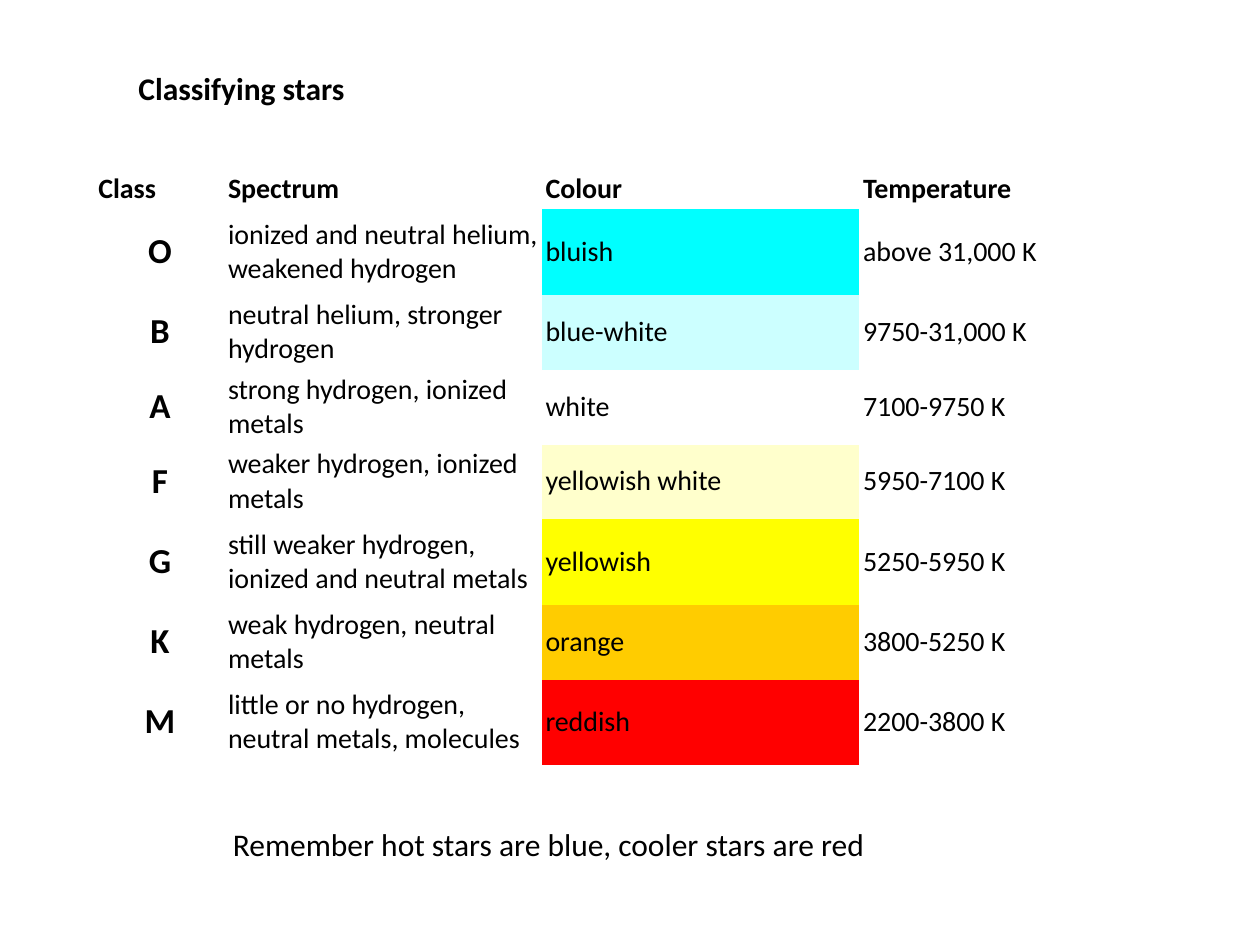
from lxml.etree import SubElement
from pptx import Presentation
from pptx.dml.color import RGBColor as RGB
from pptx.enum.text import MSO_ANCHOR as ANCHOR, PP_ALIGN as ALIGN
from pptx.oxml.ns import qn
from pptx.util import Inches, Pt

# Content
TITLE = "Classifying stars"
NOTE = "Remember hot stars are blue, cooler stars are red"
HEADERS = ["Class", "Spectrum", "Colour", "Temperature"]
# class, spectrum, colour, temperature, colour fill, row height
STARS = [
    ("O", "ionized and neutral helium, weakened hydrogen", "bluish", "above 31,000 K", "00FFFF", 0.68),
    ("B", "neutral helium, stronger hydrogen", "blue-white", "9750-31,000 K", "CCFFFF", 0.56),
    ("A", "strong hydrogen, ionized metals", "white", "7100-9750 K", "FFFFFF", 0.56),
    ("F", "weaker hydrogen, ionized metals", "yellowish white", "5950-7100 K", "FFFFCC", 0.56),
    ("G", "still weaker hydrogen, ionized and neutral metals", "yellowish", "5250-5950 K", "FFFF00", 0.68),
    ("K", "weak hydrogen, neutral metals", "orange", "3800-5250 K", "FFCC00", 0.56),
    ("M", "little or no hydrogen, neutral metals, molecules", "reddish", "2200-3800 K", "FF0000", 0.68),
]

THEME = dict(font="Calibri", ink="000000", paper="FFFFFF", body=16, text=18, letter=20)
COL_WIDTHS = [1.03, 2.52, 2.52, 2.52]
HEADER_HEIGHT = 0.18
MARGIN_NEAR, MARGIN_TIGHT = 0.03, 0.02


def write(tf, text, size=THEME["body"], bold=False, align=ALIGN.LEFT):
    p = tf.paragraphs[0]
    p.alignment = align
    r = p.add_run()
    r.text = text
    r.font.name = THEME["font"]
    r.font.size = Pt(size)
    r.font.bold = bold
    r.font.color.rgb = RGB.from_string(THEME["ink"])


def add_text(s, text, left, top, width, height, **fmt):
    tf = s.shapes.add_textbox(*map(Inches, (left, top, width, height))).text_frame
    tf.word_wrap = True
    write(tf, text, size=THEME["text"], **fmt)


def fill_cell(cell, text, fill=THEME["paper"], **fmt):
    cell.vertical_anchor = ANCHOR.MIDDLE
    cell.margin_left = cell.margin_bottom = Inches(MARGIN_NEAR)
    cell.margin_right = cell.margin_top = Inches(MARGIN_TIGHT)
    # Borders go before the fill in the cell properties
    tc_pr = cell._tc.get_or_add_tcPr()
    for side in ("lnL", "lnR", "lnT", "lnB"):
        SubElement(SubElement(tc_pr, qn(f"a:{side}"), w="0"), qn("a:noFill"))
    cell.fill.solid()
    cell.fill.fore_color.rgb = RGB.from_string(fill)
    write(cell.text_frame, text, **fmt)


def add_star_table(s, left, top):
    heights = [HEADER_HEIGHT] + [star[-1] for star in STARS]
    table = s.shapes.add_table(len(heights), len(COL_WIDTHS), Inches(left), Inches(top),
                               Inches(sum(COL_WIDTHS)), Inches(sum(heights))).table
    table.first_row = table.horz_banding = False
    for col, width in zip(table.columns, COL_WIDTHS):
        col.width = Inches(width)
    for row, height in zip(table.rows, heights):
        row.height = Inches(height)

    for c, header in enumerate(HEADERS):
        fill_cell(table.cell(0, c), header, bold=True)
    for i, (letter, spectrum, colour, temperature, fill, _) in enumerate(STARS, 1):
        fill_cell(table.cell(i, 0), letter, size=THEME["letter"], bold=True, align=ALIGN.CENTER)
        fill_cell(table.cell(i, 1), spectrum)
        fill_cell(table.cell(i, 2), colour, fill=fill)
        fill_cell(table.cell(i, 3), temperature)


def main():
    prs = Presentation()
    prs.slide_width, prs.slide_height = Inches(10), Inches(7.5)
    s = prs.slides.add_slide(prs.slide_layouts[6])
    add_star_table(s, 0.75, 1.34)
    add_text(s, TITLE, 1, 0.5, 8.25, 0.4, bold=True)
    add_text(s, NOTE, 1.75, 6.5, 5.5, 0.4)
    prs.save("out.pptx")


if __name__ == "__main__":
    main()
